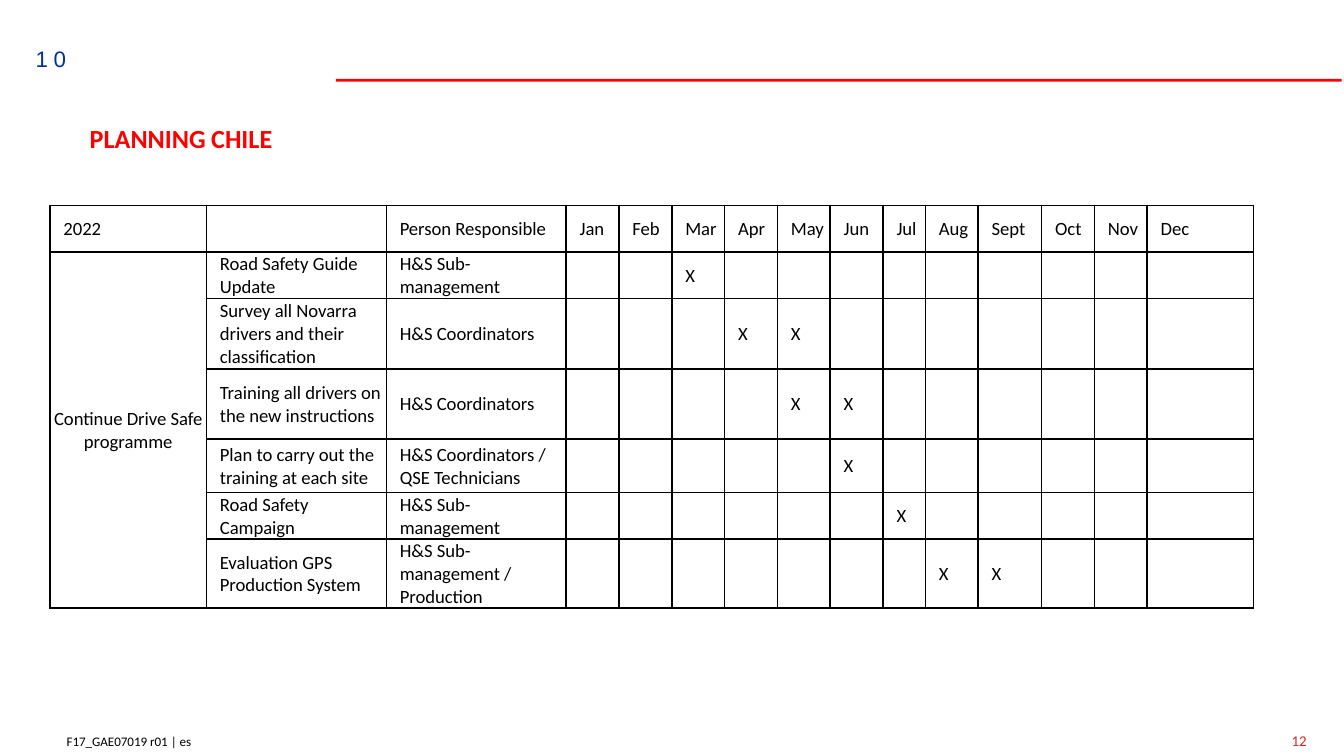
from dataclasses import dataclass
from lxml.etree import SubElement as Sub, Element as Elem
from pptx import Presentation
from pptx.dml.color import RGBColor as Rgb
from pptx.enum.shapes import MSO_SHAPE as Kind
from pptx.enum.text import MSO_ANCHOR as Anchor, MSO_AUTO_SIZE as Fit, PP_ALIGN as Align
from pptx.oxml.ns import qn
from pptx.util import Pt

HUES = {"ink": "000000", "white": "FFFFFF", "rule": "FB0007",
        "page": "DA2424", "mark": "003399", "head": "FF0000"}
MONTHS = "Jan Feb Mar Apr May Jun Jul Aug Sept Oct Nov Dec".split()
WIDE = {"Jul": 22.7, "Sept": 34, "Dec": 57}
COLS = [83.8, 96.4, 96.4] + [WIDE.get(month, 28.3) for month in MONTHS]
HEAD = 25


@dataclass
class Run:
    text: str
    size: float
    hue: str
    bold: bool = False
    font: str = "Calibri"
    space: int = 0


@dataclass
class Label:
    left: float
    top: float
    width: float
    height: float
    runs: list[Run]
    align: Align = Align.LEFT
    inset: tuple[float, float] = (7.2, 3.6)
    fit: Fit = Fit.SHAPE_TO_FIT_TEXT


@dataclass
class Task:
    name: str
    owner: str
    due: list[str]
    height: float


LABELS = [
    Label(0, 389.5, 109.5, 15.8, [Run("F17_GAE07019 r01 | es", 7, "ink")], Align.RIGHT),
    Label(689, 388.8, 73.4, 15.8, [Run("12", 8, "page")], inset=(2.9, 2.9), fit=Fit.NONE),
    Label(5.8, 20.9, 36.7, 21.6, [Run("10", 12, "mark", font="Arial", space=300)], Align.RIGHT),
    Label(41, 62, 521.3, 24.5, [Run("PLANNING", 14, "head", True), Run(" ", 12, "head"),
                                Run("CHILE", 14, "head", True)]),
]
TASKS = [
    Task("Road Safety Guide Update", "H&S Sub-management", ["Mar"], 25),
    Task("Survey all Novarra drivers and their classification",
         "H&S Coordinators", ["Apr", "May"], 37.6),
    Task("Training all drivers on the new instructions",
         "H&S Coordinators", ["May", "Jun"], 37.6),
    Task("Plan to carry out the training at each site",
         "H&S Coordinators / QSE Technicians", ["Jun"], 28.8),
    Task("Road Safety Campaign", "H&S Sub-management", ["Jul"], 19.4),
    Task("Evaluation GPS Production System",
         "H&S Sub-management / Production", ["Aug", "Sept"], 28.8),
]


def style(run, spec: Run) -> None:
    font = run.font
    font.name, font.size, font.bold = spec.font, Pt(spec.size), spec.bold
    font.color.rgb = Rgb.from_string(HUES[spec.hue])
    if spec.space:
        font._element.set("spc", str(spec.space))


def write(slide, label: Label) -> None:
    box = slide.shapes.add_textbox(
        Pt(label.left), Pt(label.top), Pt(label.width), Pt(label.height))
    frame = box.text_frame
    frame.word_wrap, frame.auto_size = True, label.fit
    frame.margin_left = frame.margin_right = Pt(label.inset[0])
    frame.margin_top = frame.margin_bottom = Pt(label.inset[1])
    para = frame.paragraphs[0]
    para.alignment = label.align
    for spec in label.runs:
        run = para.add_run()
        run.text = spec.text
        style(run, spec)


def edge(cell) -> None:
    props = cell._tc.get_or_add_tcPr()
    for spot, side in enumerate(("lnL", "lnR", "lnT", "lnB")):
        line = Elem(qn("a:" + side), w=str(Pt(1)))
        Sub(Sub(line, qn("a:solidFill")), qn("a:srgbClr"), val=HUES["ink"])
        props.insert(spot, line)


def fill(cell, text: str, mid: bool = False) -> None:
    cell.fill.solid()
    cell.fill.fore_color.rgb = Rgb.from_string(HUES["white"])
    edge(cell)
    cell.vertical_anchor = Anchor.MIDDLE
    cell.margin_left = Pt(0.6 if mid else 7.2)
    cell.margin_right = cell.margin_top = Pt(0.6)
    cell.margin_bottom = Pt(0)
    if text:
        para = cell.text_frame.paragraphs[0]
        para.text = text
        para.alignment = Align.CENTER if mid else Align.LEFT
        style(para.runs[0], Run(text, 10, "ink"))


def plan(slide) -> None:
    tall = [HEAD] + [task.height for task in TASKS]
    table = slide.shapes.add_table(len(tall), len(COLS), Pt(26.8), Pt(110),
                                   Pt(sum(COLS)), Pt(sum(tall))).table
    table.first_row = table.horz_banding = False
    for col, width in zip(table.columns, COLS):
        col.width = Pt(width)
    for row, height in zip(table.rows, tall):
        row.height = Pt(height)
    grid = [["2022", "", "Person Responsible"] + MONTHS]
    for task in TASKS:
        marks = ["X" if month in task.due else "" for month in MONTHS]
        grid.append(["", task.name, task.owner] + marks)
    grid[1][0] = "Continue Drive Safe programme"
    table.cell(1, 0).merge(table.cell(len(TASKS), 0))
    for row, texts in enumerate(grid):
        for col, text in enumerate(texts):
            fill(table.cell(row, col), text, row > 0 and col == 0)


def main() -> None:
    deck = Presentation()
    deck.slide_width, deck.slide_height = Pt(720), Pt(405)
    slide = deck.slides.add_slide(deck.slide_layouts[6])
    rule = slide.shapes.add_shape(Kind.RECTANGLE, Pt(180), Pt(42.2), Pt(538.8), Pt(1.5))
    rule.shadow.inherit = False
    rule.fill.solid()
    rule.fill.fore_color.rgb = Rgb.from_string(HUES["rule"])
    rule.line.fill.background()
    plan(slide)
    for label in LABELS:
        write(slide, label)
    deck.save("out.pptx")


if __name__ == "__main__":
    main()
